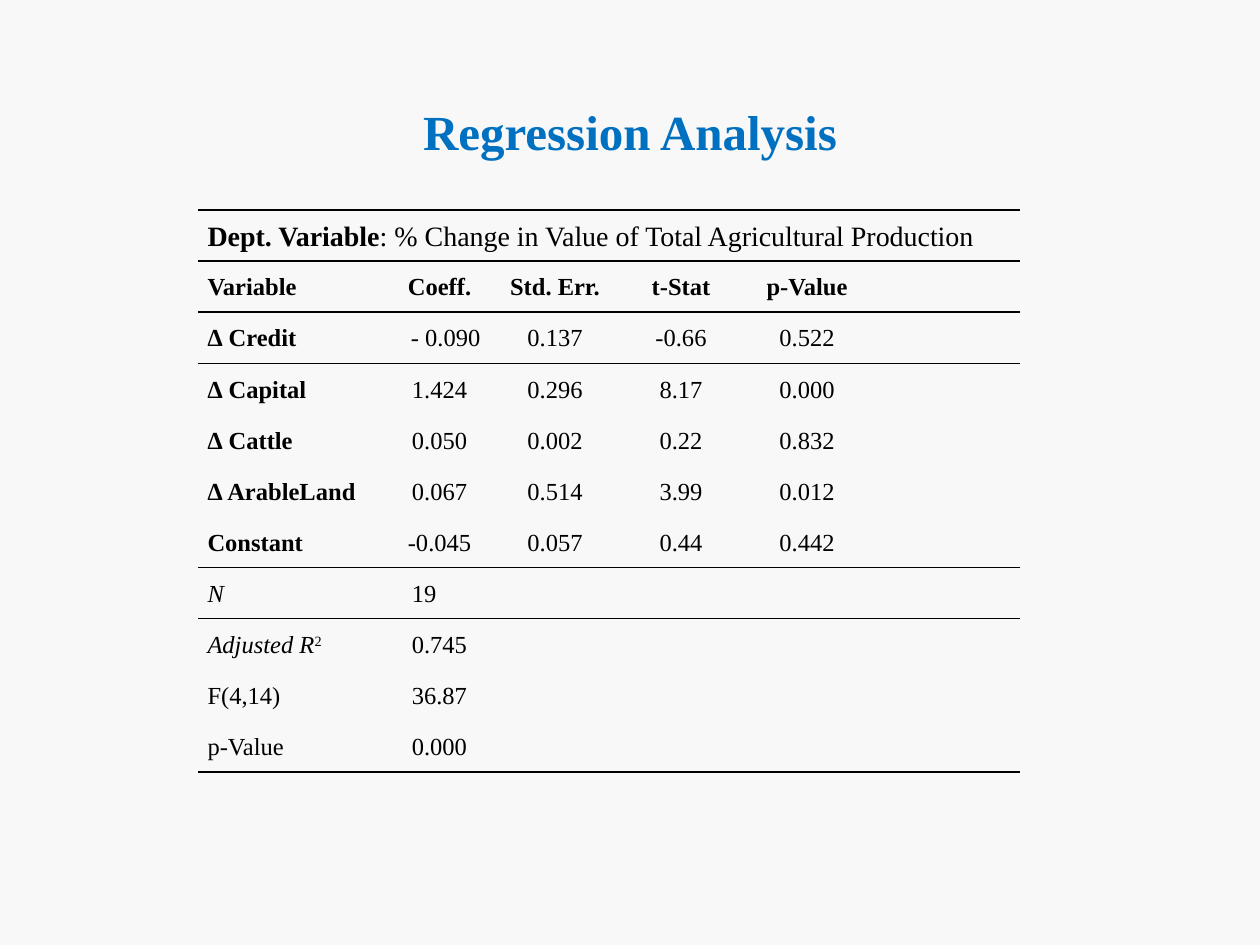
from dataclasses import dataclass, field

from lxml import etree
from pptx import Presentation
from pptx.dml.color import RGBColor
from pptx.enum.text import MSO_ANCHOR, PP_ALIGN
from pptx.oxml.ns import qn
from pptx.util import Pt

LEFT, CENTER = PP_ALIGN.LEFT, PP_ALIGN.CENTER
MIDDLE = MSO_ANCHOR.MIDDLE
TITLE_ONLY = 5
NO_GRID_STYLE = "{2D5ABB26-0587-4C30-8999-92F81FD0307C}"


@dataclass(frozen=True)
class Theme:
    face: str = "Times New Roman"
    page: RGBColor = field(default_factory=lambda: RGBColor(0xF8, 0xF8, 0xF8))
    title: RGBColor = field(default_factory=lambda: RGBColor(0x00, 0x70, 0xC0))
    ink: RGBColor = field(default_factory=lambda: RGBColor(0, 0, 0))
    title_size: int = 28
    caption_size: int = 16
    body_size: int = 14
    line_spacing: float = 1.07


@dataclass(frozen=True)
class Piece:
    text: str
    bold: bool = False
    italic: bool = False
    raised: bool = False


@dataclass(frozen=True)
class Entry:
    pieces: tuple[Piece, ...]
    align: PP_ALIGN = LEFT
    indent: float = 0
    size: int = 14


THEME = Theme()
COLUMN_WIDTHS = (108, 60, 72, 72, 72, 72, 12.8)
ROW_HEIGHT = 29.2
TABLE_LEFT, TABLE_TOP = 113.2, 120
RULED_BOUNDARIES = {0, 1, 2, 7, 11}
CELL_INSET = 5.4
SUMMARY_INDENT = 8.75
MINUS_INDENT = 7

CAPTION = (
    Piece("Dept. Variable", bold=True),
    Piece(": % Change in Value of Total Agricultural Production"),
)
HEADINGS = ("Variable", "Coeff.", "Std. Err.", "t-Stat", "p-Value")
ESTIMATES = (
    ("∆ Credit", "- 0.090", "0.137", "-0.66", "0.522"),
    ("∆ Capital", "1.424", "0.296", "8.17", "0.000"),
    ("∆ Cattle", "0.050", "0.002", "0.22", "0.832"),
    ("∆ ArableLand", "0.067", "0.514", "3.99", "0.012"),
    ("Constant", "-0.045", "0.057", "0.44", "0.442"),
)
SUMMARY = (
    ((Piece("N", italic=True),), "19"),
    ((Piece("Adjusted R", italic=True), Piece("2", raised=True)), "0.745"),
    ((Piece("F(4,14)"),), "36.87"),
    ((Piece("p-Value"),), "0.000"),
)


def estimate_row(values: tuple[str, ...], all_bold: bool = False) -> list[Entry]:
    return [
        Entry(
            (Piece(value, bold=all_bold or column == 0),),
            CENTER if column else LEFT,
            MINUS_INDENT if value.startswith("- ") else 0,
        )
        for column, value in enumerate(values)
    ]


def table_entries() -> list[list[Entry]]:
    return [
        [Entry(CAPTION, size=THEME.caption_size)],
        estimate_row(HEADINGS, all_bold=True),
        *(estimate_row(values) for values in ESTIMATES),
        *(
            [Entry(label), Entry((Piece(value),), indent=SUMMARY_INDENT)]
            for label, value in SUMMARY
        ),
    ]


def style_font(font, size: int, color: RGBColor) -> None:
    font.name = THEME.face
    font.size = Pt(size)
    font.color.rgb = color


def write_entry(cell, entry: Entry) -> None:
    para = cell.text_frame.paragraphs[0]
    para.alignment = entry.align
    para.line_spacing = THEME.line_spacing
    if entry.indent:
        properties = para._p.get_or_add_pPr()
        properties.set("marL", str(Pt(entry.indent)))
        properties.set("indent", "0")
    style_font(para.font, entry.size, THEME.ink)
    for piece in entry.pieces:
        span = para.add_run()
        span.text = piece.text
        span.font.bold = piece.bold
        span.font.italic = piece.italic
        if piece.raised:
            span.font._element.set("baseline", "30000")


def add_rule(cell, side: str) -> None:
    line = etree.SubElement(cell._tc.get_or_add_tcPr(), qn(f"a:{side}"), w=str(Pt(1)))
    fill = etree.SubElement(line, qn("a:solidFill"))
    etree.SubElement(fill, qn("a:srgbClr"), val=str(THEME.ink))


def format_cell(cell, row: int) -> None:
    cell.margin_left = cell.margin_right = Pt(CELL_INSET)
    cell.margin_top = cell.margin_bottom = Pt(0)
    cell.vertical_anchor = MIDDLE
    for side, boundary in (("lnT", row), ("lnB", row + 1)):
        if boundary in RULED_BOUNDARIES:
            add_rule(cell, side)
    cell.fill.background()


def add_title(page, text: str) -> None:
    title = page.shapes.title
    title.left, title.top, title.width, title.height = Pt(36), Pt(30), Pt(648), Pt(90)
    title.text_frame.text = text
    title.text_frame.vertical_anchor = MIDDLE
    para = title.text_frame.paragraphs[0]
    para.alignment = CENTER
    style_font(para.font, THEME.title_size, THEME.title)
    para.font.bold = True


def add_regression_table(page, entries: list[list[Entry]]) -> None:
    frame = page.shapes.add_table(
        len(entries), len(COLUMN_WIDTHS), Pt(TABLE_LEFT), Pt(TABLE_TOP),
        Pt(sum(COLUMN_WIDTHS)), Pt(ROW_HEIGHT * len(entries)),
    )
    table = frame.table
    table.first_row = table.horz_banding = False
    table._tbl.tblPr.find(qn("a:tableStyleId")).text = NO_GRID_STYLE
    for column, width in zip(table.columns, COLUMN_WIDTHS):
        column.width = Pt(width)
    for row_index, row_entries in enumerate(entries):
        table.rows[row_index].height = Pt(ROW_HEIGHT)
        for column_index in range(len(COLUMN_WIDTHS)):
            format_cell(table.cell(row_index, column_index), row_index)
        for column_index, entry in enumerate(row_entries):
            write_entry(table.cell(row_index, column_index), entry)
    table.cell(0, 0).merge(table.cell(0, 5))


def main() -> None:
    deck = Presentation()
    deck.slide_width, deck.slide_height = Pt(720), Pt(540)
    page = deck.slides.add_slide(deck.slide_layouts[TITLE_ONLY])
    page.background.fill.solid()
    page.background.fill.fore_color.rgb = THEME.page
    add_title(page, "Regression Analysis")
    add_regression_table(page, table_entries())
    deck.save("out.pptx")


if __name__ == "__main__":
    main()
